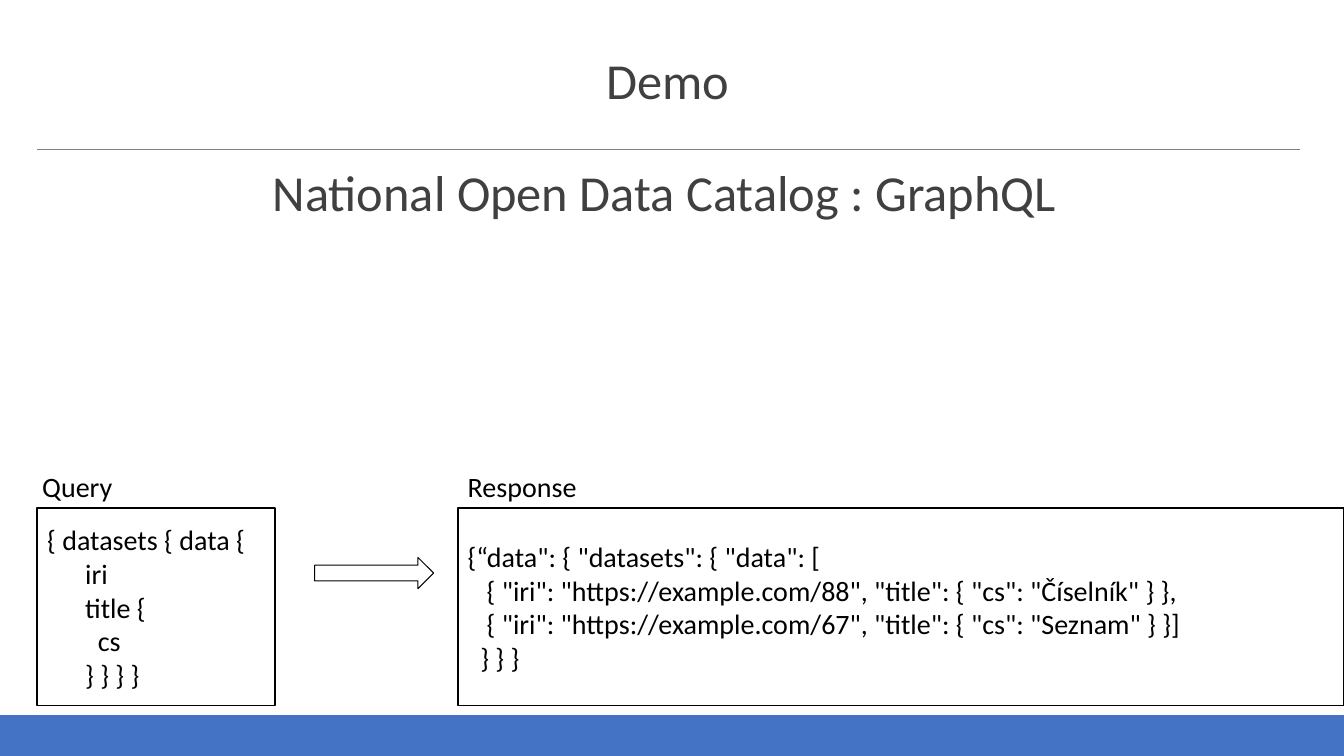
from lxml.etree import SubElement
from pptx import Presentation
from pptx.dml.color import RGBColor
from pptx.enum.shapes import MSO_CONNECTOR, MSO_SHAPE
from pptx.enum.text import MSO_ANCHOR, MSO_AUTO_SIZE, PP_ALIGN
from pptx.oxml.ns import qn
from pptx.util import Inches, Pt

QUERY = [
    "{ datasets { data {",
    "      iri",
    "      title {",
    "        cs",
    "      } } } }",
]
RESPONSE = [
    '{“data": { "datasets": { "data": [',
    '   { "iri": "https://example.com/88", "title": { "cs": "Číselník" } },',
    '   { "iri": "https://example.com/67", "title": { "cs": "Seznam" } }]',
    "  } } }",
]


def paint(color, value):
    color.rgb = RGBColor.from_string(value)


def place(shape, *box):
    shape.left, shape.top, shape.width, shape.height = map(Inches, box)


def write(frame, lines, size=20, color="000000", align=PP_ALIGN.LEFT):
    frame.word_wrap = True
    for i, line in enumerate(lines):
        para = frame.paragraphs[0] if i == 0 else frame.add_paragraph()
        para.alignment = align
        run = para.add_run()
        run.text = line
        run.font.size = Pt(size)
        run.font.name = "Calibri"
        paint(run.font.color, color)


def add_head(shape, text, anchor, *box):
    place(shape, *box)
    frame = shape.text_frame
    frame.auto_size = MSO_AUTO_SIZE.NONE
    frame.vertical_anchor = anchor
    frame.margin_left = frame.margin_right = 0
    frame.margin_top = frame.margin_bottom = Inches(0.04)
    write(frame, [text], 36, "404040", PP_ALIGN.CENTER)
    para = frame.paragraphs[0]
    para.line_spacing = 0.9
    para.space_before = Pt(0)


def add_form(slide, kind, box, line="000000", width=1.25, fill=None):
    shape = slide.shapes.add_shape(kind, *map(Inches, box))
    shape.shadow.inherit = False
    if fill:
        shape.fill.solid()
        paint(shape.fill.fore_color, fill)
    else:
        shape.fill.background()
    paint(shape.line.color, line)
    shape.line.width = Pt(width)
    return shape


def add_rule(slide, left, right, top):
    ends = map(Inches, (left, top, right, top))
    rule = slide.shapes.add_connector(MSO_CONNECTOR.STRAIGHT, *ends)
    paint(rule.line.color, "808080")
    rule.line.width = Pt(0.5)
    SubElement(rule._element.spPr, qn("a:effectLst"))


def add_label(slide, text, *box):
    label = slide.shapes.add_textbox(*map(Inches, box))
    write(label.text_frame, [text])


def add_code(slide, lines, left, width):
    box = (left, 5.04, width, 1.96)
    shape = add_form(slide, MSO_SHAPE.RECTANGLE, box)
    shape.text_frame.vertical_anchor = MSO_ANCHOR.MIDDLE
    write(shape.text_frame, lines)


def main():
    deck = Presentation()
    deck.slide_width, deck.slide_height = Inches(13.33), Inches(7.5)
    slide = deck.slides.add_slide(deck.slide_layouts[5])

    band = (0, 7.1, 13.33, 0.4)
    add_form(slide, MSO_SHAPE.RECTANGLE, band, "4472C4", fill="4472C4")
    add_rule(slide, 0.37, 12.89, 1.48)
    add_head(slide.shapes.title, "Demo", MSO_ANCHOR.MIDDLE,
             2.49, 0.36, 8.27, 0.94)
    topic = slide.shapes.add_textbox(0, 0, 0, 0)
    add_head(topic, "National Open Data Catalog : GraphQL", MSO_ANCHOR.TOP,
             1.55, 1.63, 10.08, 2.05)

    add_code(slide, QUERY, 0.37, 2.36)
    add_label(slide, "Query", 0.32, 4.61, 1.21, 0.44)
    add_form(slide, MSO_SHAPE.RIGHT_ARROW, (3.12, 5.53, 1.18, 0.31), width=0.75)
    add_code(slide, RESPONSE, 4.54, 8.79)
    add_label(slide, "Response", 4.54, 4.61, 1.57, 0.44)

    deck.save("out.pptx")


if __name__ == "__main__":
    main()
